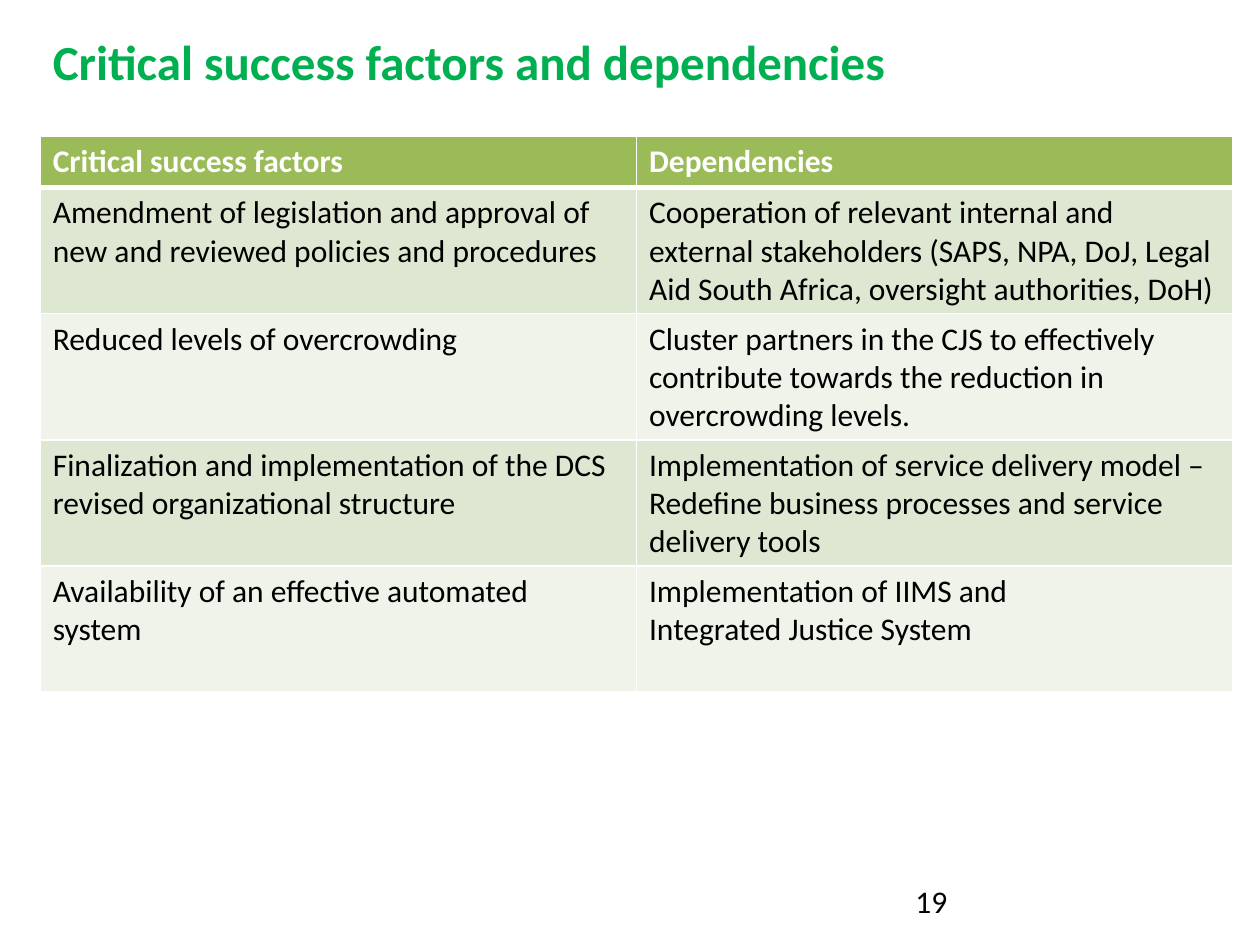
from lxml.etree import SubElement
from pptx import Presentation
from pptx.dml.color import RGBColor
from pptx.enum.text import MSO_ANCHOR as Anchor, MSO_AUTO_SIZE as AutoSize, PP_ALIGN as Align
from pptx.oxml.ns import qn
from pptx.util import Pt

GREEN = RGBColor(0x00, 0xB0, 0x50)
HEADER_FILL = RGBColor(0x9B, 0xBB, 0x59)
BAND_FILLS = (RGBColor(0xDE, 0xE7, 0xD1), RGBColor(0xEF, 0xF3, 0xEA))
WHITE = RGBColor(0xFF, 0xFF, 0xFF)
BLACK = RGBColor(0x00, 0x00, 0x00)

LEFT, CONTENT_WIDTH = 23, 681.5
HEADER_HEIGHT, ROW_HEIGHT = 29.5, 72

ROWS = [
    ("Critical success factors", "Dependencies"),
    ("Amendment of legislation and approval of new and reviewed policies and procedures",
     "Cooperation of relevant internal and external stakeholders (SAPS, NPA, DoJ, "
     "Legal Aid South Africa, oversight authorities, DoH)"),
    ("Reduced levels of overcrowding",
     "Cluster partners in the CJS to effectively contribute towards the reduction in "
     "overcrowding levels."),
    ("Finalization and implementation of the DCS revised organizational structure",
     "Implementation of service delivery model – Redefine business processes and "
     "service delivery tools"),
    ("Availability of an effective automated system",
     "Implementation of IIMS and\nIntegrated Justice System"),
]


class SlideBuilder:
    """Holds the text style and the slide being filled."""

    def __init__(self, slide, font_name="Calibri", body_size=18):
        self.slide = slide
        self.font_name = font_name
        self.body_size = body_size

    def add_text(self, text_frame, text, color=BLACK, size=None, bold=False):
        """Add each line of the text as a left-aligned paragraph."""
        text_frame.word_wrap = True
        for index, line in enumerate(text.split("\n")):
            paragraph = text_frame.add_paragraph() if index else text_frame.paragraphs[0]
            paragraph.alignment = Align.LEFT
            run = paragraph.add_run()
            run.text = line
            run.font.name = self.font_name
            run.font.size = Pt(size or self.body_size)
            run.font.bold = bold
            run.font.color.rgb = color

    def title(self, text, left, top, width, height):
        title = self.slide.shapes.title
        title.left, title.top, title.width, title.height = map(Pt, (left, top, width, height))
        title.text_frame.auto_size = AutoSize.NONE
        title.text_frame.vertical_anchor = Anchor.MIDDLE
        self.add_text(title.text_frame, text, GREEN, 28, True)

    def text_box(self, text, left, top, width, height):
        box = self.slide.shapes.add_textbox(*map(Pt, (left, top, width, height)))
        box.text_frame.vertical_anchor = Anchor.MIDDLE
        self.add_text(box.text_frame, text)

    def border(self, cell, side, width):
        properties = cell._tc.get_or_add_tcPr()
        line = SubElement(properties, qn(f"a:ln{side}"), w=str(Pt(width)))
        fill = SubElement(line, qn("a:solidFill"))
        SubElement(fill, qn("a:srgbClr"), val=str(WHITE))

    def table(self, rows, left, top, width):
        height = HEADER_HEIGHT + ROW_HEIGHT * (len(rows) - 1)
        frame = self.slide.shapes.add_table(
            len(rows), len(rows[0]), *map(Pt, (left, top, width, height)))
        table = frame.table
        for column in table.columns:
            column.width = Pt(width / len(rows[0]))
        for row_index, texts in enumerate(rows):
            is_header = row_index == 0
            table.rows[row_index].height = Pt(HEADER_HEIGHT if is_header else ROW_HEIGHT)
            for column_index, text in enumerate(texts):
                cell = table.cell(row_index, column_index)
                for side in "LRTB":
                    thick = (is_header and side == "B") or (row_index == 1 and side == "T")
                    self.border(cell, side, 3 if thick else 1)
                cell.fill.solid()
                cell.fill.fore_color.rgb = (
                    HEADER_FILL if is_header else BAND_FILLS[(row_index - 1) % 2])
                self.add_text(cell.text_frame, text, WHITE if is_header else BLACK,
                              bold=is_header)


def main():
    presentation = Presentation()
    presentation.slide_width, presentation.slide_height = Pt(720), Pt(540)
    builder = SlideBuilder(presentation.slides.add_slide(presentation.slide_layouts[5]))
    builder.title("Critical success factors and dependencies", LEFT, 14.5, CONTENT_WIDTH, 41)
    builder.text_box("19", 516, 500.5, 168, 29)
    builder.table(ROWS, LEFT, 77.75, CONTENT_WIDTH)
    presentation.save("out.pptx")


if __name__ == "__main__":
    main()
